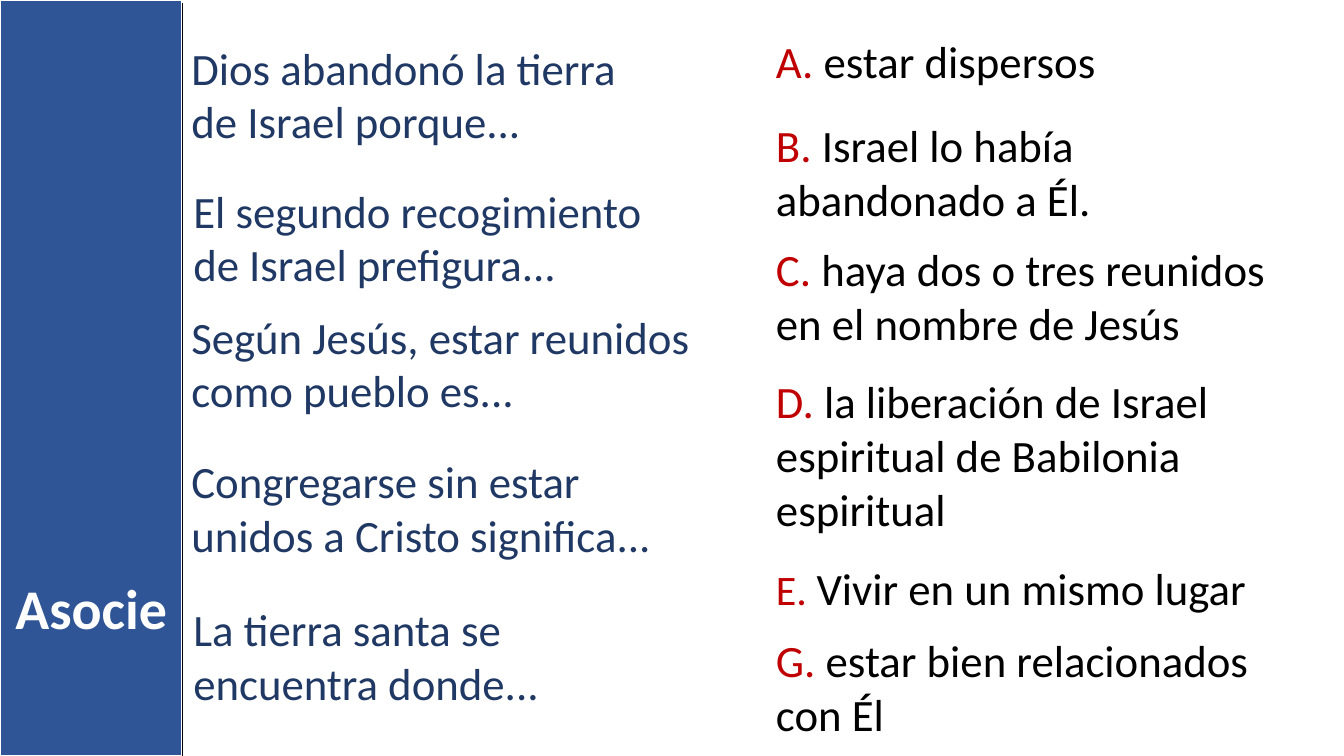
from dataclasses import dataclass

import pptx
import pptx.dml.color
import pptx.enum.shapes
import pptx.enum.text
import pptx.oxml.ns
import pptx.util
from lxml import etree
from pptx.util import Pt

FONT = "Calibri"
NAVY, RED, BLACK, WHITE, BLUE = "203864", "C00000", "000000", "FFFFFF", "2F5597"
SLIDE_WIDTH, SLIDE_HEIGHT = 960, 540
BAND_WIDTH = 130.3
ANSWER_LEFT = 547.2
LINE_HEIGHT, VERTICAL_INSETS = 38.9, 7.2


@dataclass
class Run:
    text: str
    color: str
    size: float = 32
    bold: bool = False


@dataclass
class Question:
    text: str
    left: float
    top: float
    width: float


@dataclass
class Answer:
    letter: str
    text: str
    top: float
    width: float
    lines: int = 2
    letter_size: float = 32


QUESTIONS = [
    Question("Dios abandonó la tierra de Israel porque...", 129.6, 25.2, 319),
    Question("El segundo recogimiento de Israel prefigura...", 131, 127.4, 341.3),
    Question("Según Jesús, estar reunidos como pueblo es...", 129.6, 217.4, 371.5),
    Question("Congregarse sin estar unidos a Cristo significa...", 129.6, 320.4, 360.7),
    Question("La tierra santa se encuentra donde...", 131, 426.2, 317.5),
]

ANSWERS = [
    Answer("A. ", "estar dispersos", 20.9, 401.8, lines=1),
    Answer("B. ", "Israel lo había abandonado a Él.", 80.6, 395.3),
    Answer("C. ", "haya dos o tres reunidos en el nombre de Jesús", 169.2, 379.4),
    Answer("D. ", "la liberación de Israel espiritual de Babilonia espiritual", 263.5, 401.8, lines=3),
    Answer("E. ", "Vivir en un mismo lugar", 396.7, 369.4, lines=1, letter_size=30),
    Answer("G. ", "estar bien relacionados con Él", 448.6, 374.4),
]


def rgb(color: str) -> pptx.dml.color.RGBColor:
    return pptx.dml.color.RGBColor.from_string(color)


def add_text(slide, left: float, top: float, width: float, height: float,
             runs: list[Run], alignment=pptx.enum.text.PP_ALIGN.LEFT) -> None:
    shape = slide.shapes.add_textbox(Pt(left), Pt(top), Pt(width), Pt(height))
    frame = shape.text_frame
    frame.word_wrap = True
    frame.auto_size = pptx.enum.text.MSO_AUTO_SIZE.SHAPE_TO_FIT_TEXT
    paragraph = frame.paragraphs[0]
    paragraph.alignment = alignment
    for item in runs:
        run = paragraph.add_run()
        run.text = item.text
        run.font.name = FONT
        run.font.size = Pt(item.size)
        run.font.bold = item.bold
        run.font.color.rgb = rgb(item.color)


def text_height(lines: int) -> float:
    return lines * LINE_HEIGHT + VERTICAL_INSETS


def add_band(slide) -> None:
    band = slide.shapes.add_shape(pptx.enum.shapes.MSO_SHAPE.RECTANGLE,
                                  0, 0, Pt(BAND_WIDTH), Pt(SLIDE_HEIGHT))
    band.shadow.inherit = False
    band.fill.solid()
    band.fill.fore_color.rgb = rgb(BLUE)
    band.line.color.rgb = rgb(WHITE)
    band.line.width = Pt(1.5)


def add_band_edge(slide) -> None:
    edge = slide.shapes.add_connector(pptx.enum.shapes.MSO_CONNECTOR.STRAIGHT,
                                      Pt(BAND_WIDTH), Pt(2), Pt(BAND_WIDTH), Pt(SLIDE_HEIGHT))
    edge.line.color.rgb = rgb(BLACK)
    edge.line.width = Pt(1)
    etree.SubElement(edge.element.spPr, pptx.oxml.ns.qn("a:effectLst"))


def main() -> None:
    presentation = pptx.Presentation()
    presentation.slide_width = Pt(SLIDE_WIDTH)
    presentation.slide_height = Pt(SLIDE_HEIGHT)
    slide = presentation.slides.add_slide(presentation.slide_layouts[6])

    add_band(slide)
    for question in QUESTIONS:
        add_text(slide, question.left, question.top, question.width, text_height(2),
                 [Run(question.text, NAVY)])
    for answer in ANSWERS:
        add_text(slide, ANSWER_LEFT, answer.top, answer.width, text_height(answer.lines),
                 [Run(answer.letter, RED, answer.letter_size), Run(answer.text, BLACK)])
    add_text(slide, 0, 406, BAND_WIDTH, 55.7, [Run("Asocie", WHITE, 40, bold=True)],
             pptx.enum.text.PP_ALIGN.CENTER)
    add_band_edge(slide)

    presentation.save("out.pptx")


if __name__ == "__main__":
    main()
